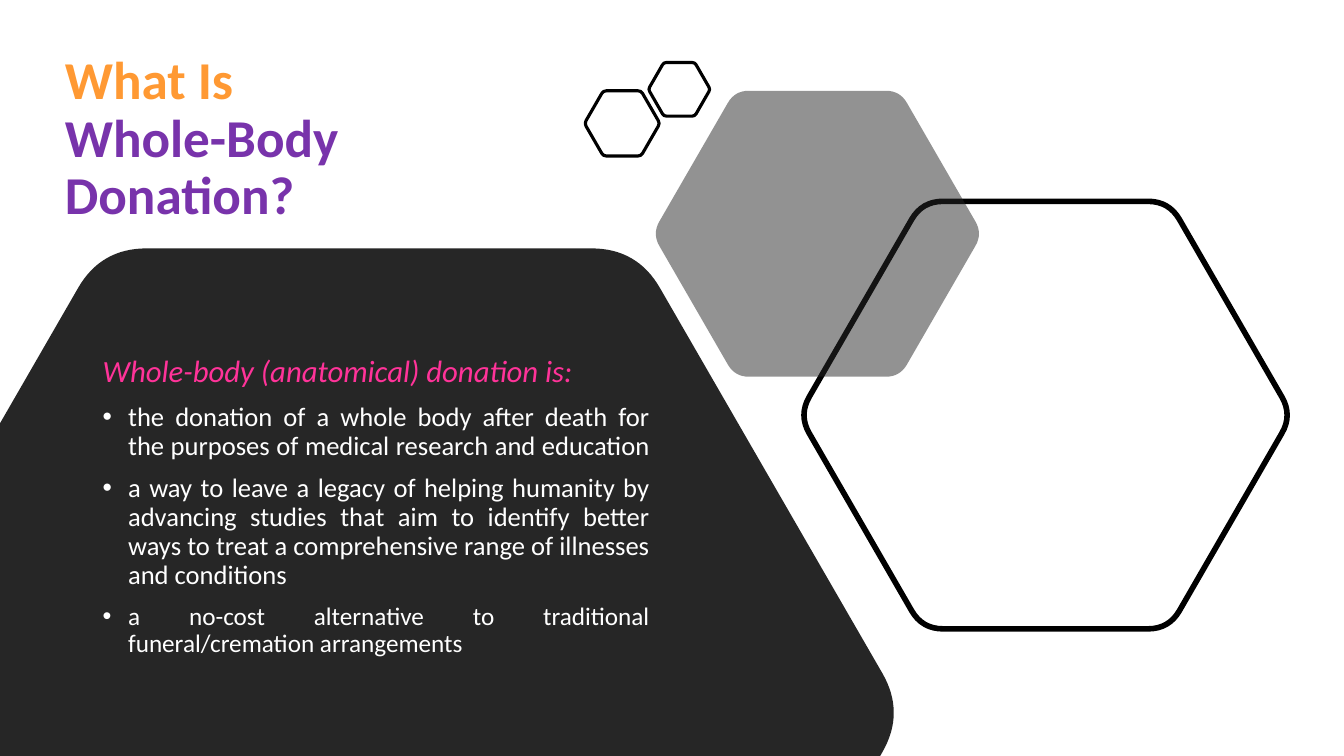
import math

import pptx
import pptx.dml.color
import pptx.enum.text
import pptx.oxml
import pptx.oxml.ns
import pptx.util
from pptx.util import Cm

ORANGE = pptx.dml.color.RGBColor(0xFF, 0x99, 0x33)
PURPLE = pptx.dml.color.RGBColor(0x78, 0x33, 0xAB)
PINK = pptx.dml.color.RGBColor(0xFF, 0x33, 0x99)
WHITE = pptx.dml.color.RGBColor(0xFF, 0xFF, 0xFF)
BLACK = pptx.dml.color.RGBColor(0x00, 0x00, 0x00)
CHARCOAL = pptx.dml.color.RGBColor(0x26, 0x26, 0x26)

SLIDE_WIDTH, SLIDE_HEIGHT = 33.87, 19.05
CORNER_RATIO = 0.085  # length cut from each side, relative to the radius

BULLETS = [
    ("the donation of a whole body after death for the purposes of medical "
     "research and education ", 19),
    ("a way to leave a legacy of helping humanity by advancing studies that aim "
     "to identify better ways to treat a comprehensive range of illnesses and "
     "conditions", 19),
    ("a no-cost alternative to traditional funeral/cremation arrangements", 18),
]


def add_text(paragraph, text, size, color, bold=False, italic=False):
    run = paragraph.add_run()
    run.text = text
    run.font.name = "Calibri"
    run.font.size = pptx.util.Pt(size)
    run.font.color.rgb = color
    run.font.bold = bold
    run.font.italic = italic


def hexagon_corners(center_x, center_y, radius):
    """Corners of a flat-topped hexagon, clockwise from the right one."""
    angles = [math.radians(60 * index) for index in range(6)]
    return [(center_x + radius * math.cos(angle),
             center_y + radius * math.sin(angle)) for angle in angles]


def toward(point, target, distance):
    share = distance / math.dist(point, target)
    return tuple(p + (t - p) * share for p, t in zip(point, target))


def draw_rounded(shapes, corners, cut, sharp=(), fill=None, opacity=100,
                 line_width=None):
    """Draw a polygon whose corners, except the sharp ones, are curves."""
    points, curve_starts = [], []
    for index, corner in enumerate(corners):
        if corner in sharp:
            points.append(corner)
            continue
        before, after = corners[index - 1], corners[(index + 1) % len(corners)]
        curve_starts.append(len(points))
        points += [toward(corner, before, cut), toward(corner, before, cut / 3),
                   toward(corner, after, cut / 3), toward(corner, after, cut)]

    points = [(Cm(x), Cm(y)) for x, y in points]
    builder = shapes.build_freeform(*points[0])
    builder.add_line_segments(points[1:], close=True)
    shape = builder.convert_to_shape()
    shape.shadow.inherit = False

    # Join the three segments after each curve start into one Bezier curve
    segments = list(shape._element.iter(pptx.oxml.ns.qn("a:lnTo")))
    for start in curve_starts:
        curve = pptx.oxml.parse_xml(
            f'<a:cubicBezTo {pptx.oxml.ns.nsdecls("a")}/>')
        segments[start].addprevious(curve)
        for segment in segments[start:start + 3]:
            curve.append(segment[0])
            segment.getparent().remove(segment)

    if fill is None:
        shape.fill.background()
    else:
        shape.fill.solid()
        shape.fill.fore_color.rgb = fill
        if opacity < 100:
            color = shape._element.spPr.find(".//" + pptx.oxml.ns.qn("a:srgbClr"))
            color.append(pptx.oxml.parse_xml(
                f'<a:alpha {pptx.oxml.ns.nsdecls("a")} val="{opacity * 1000}"/>'))
    if line_width is None:
        shape.line.fill.background()
    else:
        shape.line.color.rgb = BLACK
        shape.line.width = pptx.util.Pt(line_width)


def draw_hexagon(shapes, center_x, center_y, radius, **style):
    draw_rounded(shapes, hexagon_corners(center_x, center_y, radius),
                 radius * CORNER_RATIO, **style)


def draw_panel(slide, center_x, center_y, radius):
    """Large hexagon that ends at the left and bottom edges of the slide."""
    corners = hexagon_corners(center_x, center_y, radius)
    right, upper_left, upper_right = corners[0], corners[4], corners[5]
    slope = math.sqrt(3)
    left_end = (0, upper_left[1] + upper_left[0] * slope)
    bottom_end = (right[0] - (SLIDE_HEIGHT - right[1]) / slope, SLIDE_HEIGHT)
    bottom_left = (0, SLIDE_HEIGHT)
    draw_rounded(
        slide.shapes,
        [left_end, upper_left, upper_right, right, bottom_end, bottom_left],
        radius * CORNER_RATIO, sharp=(left_end, bottom_end, bottom_left),
        fill=CHARCOAL)


def draw_small_pair(slide, left, top):
    group = slide.shapes.add_group_shape()
    for offset_x, offset_y, radius in ((0.95, 1.54, 0.95), (2.39, 0.68, 0.78)):
        draw_hexagon(group.shapes, left + offset_x, top + offset_y, radius,
                     line_width=2.25)


def write_title(slide, left, top, width, height):
    title = slide.shapes.title
    title.left, title.top = Cm(left), Cm(top)
    title.width, title.height = Cm(width), Cm(height)
    frame = title.text_frame
    frame.word_wrap = True
    frame.auto_size = pptx.enum.text.MSO_AUTO_SIZE.NONE
    frame.vertical_anchor = pptx.enum.text.MSO_ANCHOR.MIDDLE
    paragraph = frame.paragraphs[0]
    paragraph.alignment = pptx.enum.text.PP_ALIGN.LEFT
    paragraph.line_spacing = 0.9
    add_text(paragraph, "What Is ", 38, ORANGE, bold=True)
    paragraph.add_line_break()
    add_text(paragraph, "Whole-Body Donation?", 38, PURPLE, bold=True)


def format_paragraph(paragraph, bullet=False):
    paragraph.alignment = pptx.enum.text.PP_ALIGN.JUSTIFY
    paragraph.line_spacing = 0.9
    paragraph.space_before = pptx.util.Pt(10)
    if bullet:
        properties = paragraph._p.get_or_add_pPr()
        properties.set("marL", str(Cm(0.64)))
        properties.set("indent", str(Cm(-0.64)))
        namespace = pptx.oxml.ns.nsdecls("a")
        properties.append(pptx.oxml.parse_xml(
            f'<a:buFont {namespace} typeface="Arial"/>'))
        properties.append(pptx.oxml.parse_xml(
            f'<a:buChar {namespace} char="•"/>'))


def write_body(slide, left, top, width, height):
    text_box = slide.shapes.add_textbox(Cm(left), Cm(top), Cm(width), Cm(height))
    frame = text_box.text_frame
    frame.word_wrap = True
    heading = frame.paragraphs[0]
    format_paragraph(heading)
    add_text(heading, "Whole-body (anatomical) donation is: ", 22, PINK, italic=True)
    for text, size in BULLETS:
        paragraph = frame.add_paragraph()
        format_paragraph(paragraph, bullet=True)
        add_text(paragraph, text, size, WHITE)


def main():
    presentation = pptx.Presentation()
    presentation.slide_width = Cm(SLIDE_WIDTH)
    presentation.slide_height = Cm(SLIDE_HEIGHT)
    slide = presentation.slides.add_slide(presentation.slide_layouts[5])

    write_title(slide, 1.38, 1.24, 13.18, 4.57)

    # Hexagons, from back to front
    draw_panel(slide, 9.3, 17.96, 13.51)
    draw_hexagon(slide.shapes, 26.35, 10.46, 6.22, line_width=4)
    draw_hexagon(slide.shapes, 20.6, 5.89, 4.16, fill=CHARCOAL, opacity=50)
    draw_small_pair(slide, 14.73, 1.57)

    # Definition on the dark panel
    write_body(slide, 2.34, 8.85, 14.28, 8.61)

    presentation.save("out.pptx")


if __name__ == "__main__":
    main()
